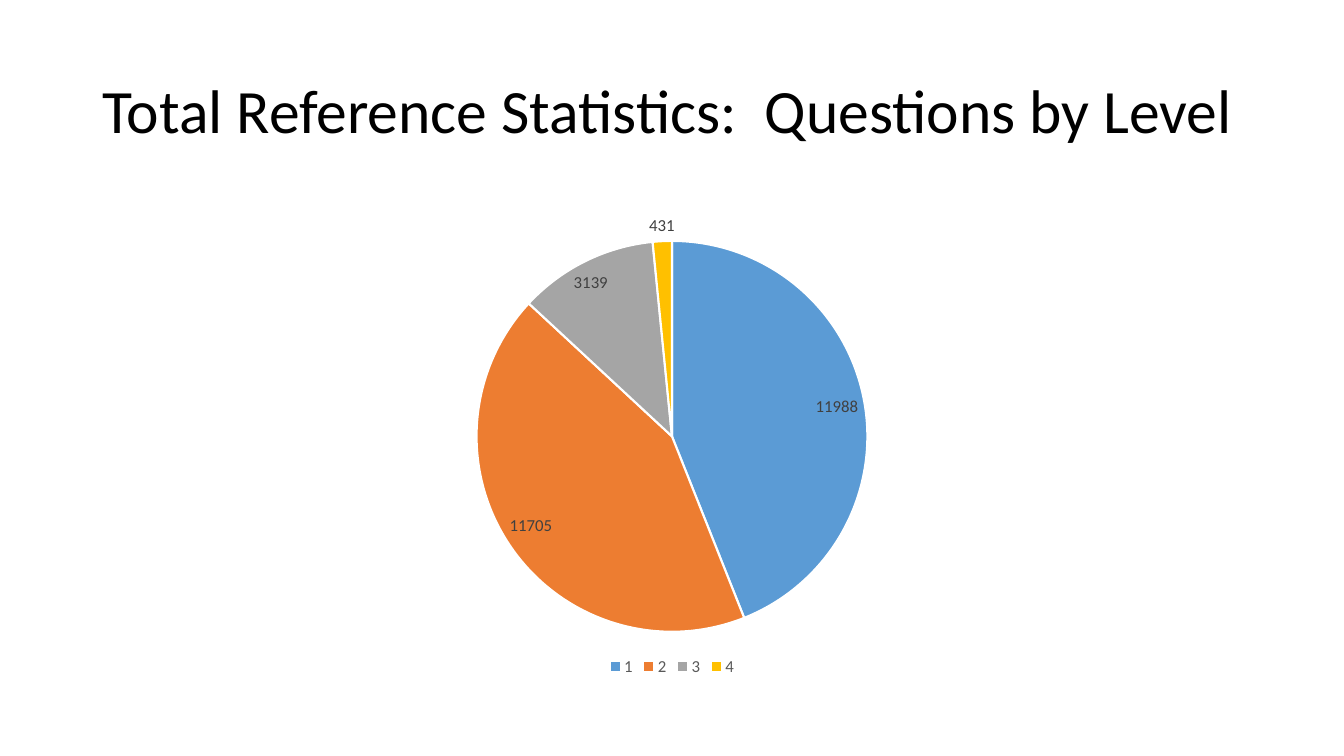
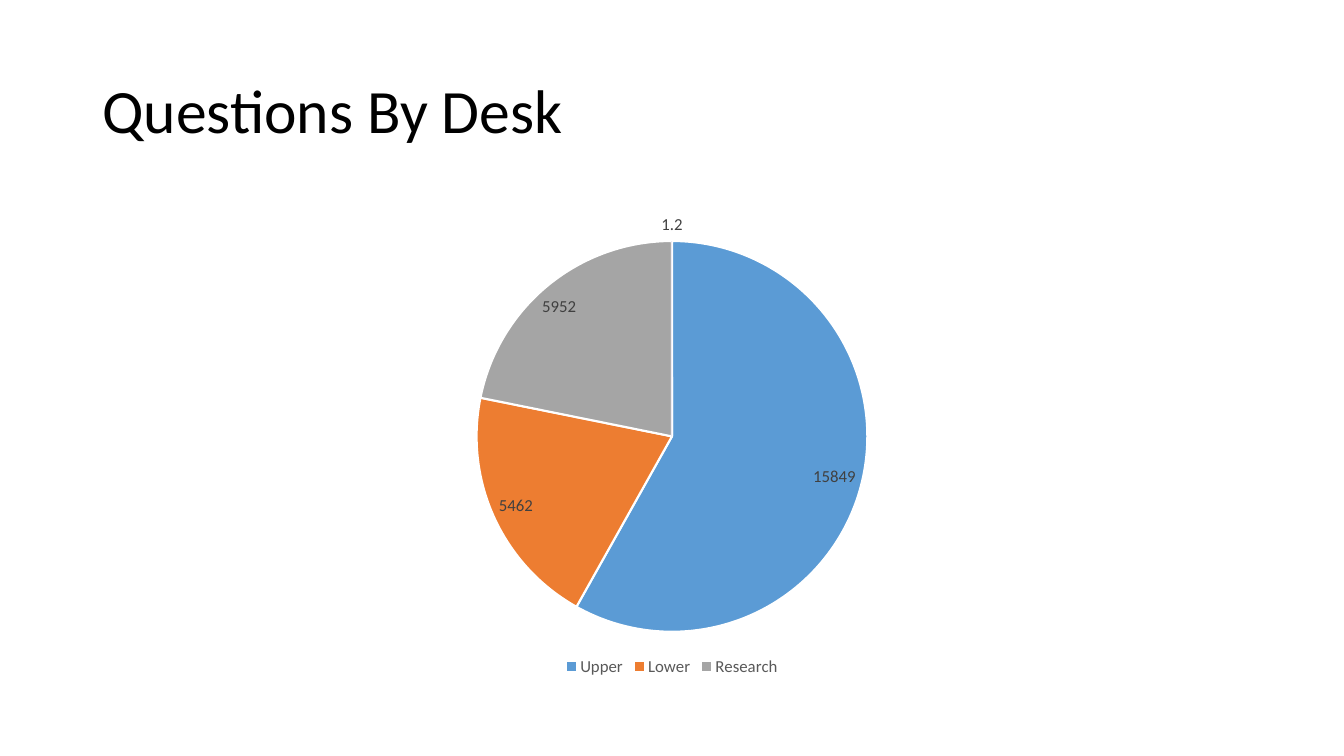
"""Build two slides of reference desk statistics, each with a pie chart."""
from pptx import Presentation, util as u
from pptx.chart import data as cd
from pptx.dml.color import RGBColor
from pptx.enum import chart as ec, text as et

FONT = "Calibri"
HUES = {
    "title": "000000", "label": "404040", "legend": "595959", "edge": "FFFFFF",
    "blue": "5B9BD5", "orange": "ED7D31", "gray": "A5A5A5", "gold": "FFC000",
}
WEDGES = ("blue", "orange", "gray", "gold")
LEFT, WIDTH = u.Cm(2.33), u.Cm(29.21)

SLIDES = (
    ("Total Reference Statistics:  Questions by Level",
     ("1", "2", "3", "4"), (11988, 11705, 3139, 431)),
    ("Questions By Desk",
     ("Upper", "Lower", "Research"), (15849, 5462, 5952, 1.2)),
)


def hue(name):
    return RGBColor.from_string(HUES[name])


def style(font, size, name):
    font.name = FONT
    font.size = u.Pt(size)
    font.color.rgb = hue(name)


def paint(form, name):
    form.fill.solid()
    form.fill.fore_color.rgb = hue(name)
    form.line.width = u.Pt(1.5)
    form.line.color.rgb = hue("edge")


def add_title(slide, words):
    frame = slide.shapes.add_textbox(LEFT, u.Cm(1.01), WIDTH, u.Cm(3.68)).text_frame
    frame.word_wrap = True
    frame.vertical_anchor = et.MSO_ANCHOR.MIDDLE
    frame.text = words
    para = frame.paragraphs[0]
    para.alignment = et.PP_ALIGN.LEFT
    para.line_spacing = 0.9
    style(para.runs[0].font, 44, "title")


def add_pie(slide, names, counts):
    data = cd.CategoryChartData()
    data.categories = names
    data.add_series("Series 1", counts)
    chart = slide.shapes.add_chart(
        ec.XL_CHART_TYPE.PIE, LEFT, u.Cm(5.07), WIDTH, u.Cm(12.09), data).chart
    chart.has_title = False
    style(chart.font, 10, "title")

    chart.has_legend = True
    chart.legend.position = ec.XL_LEGEND_POSITION.BOTTOM
    chart.legend.include_in_layout = False
    style(chart.legend.font, 12, "legend")

    plot = chart.plots[0]
    plot.vary_by_categories = True
    plot.has_data_labels = True
    labels = plot.data_labels
    labels.show_value = True
    labels.show_percentage = False
    labels.position = ec.XL_LABEL_POSITION.BEST_FIT
    style(labels.font, 12, "label")

    points = plot.series[0].points
    for i in range(len(points)):
        paint(points[i].format, WEDGES[i])


def main():
    deck = Presentation()
    deck.slide_width, deck.slide_height = u.Cm(33.87), u.Cm(19.05)
    for words, names, counts in SLIDES:
        slide = deck.slides.add_slide(deck.slide_layouts[6])
        add_title(slide, words)
        add_pie(slide, names, counts)
    deck.save("out.pptx")


if __name__ == "__main__":
    main()
